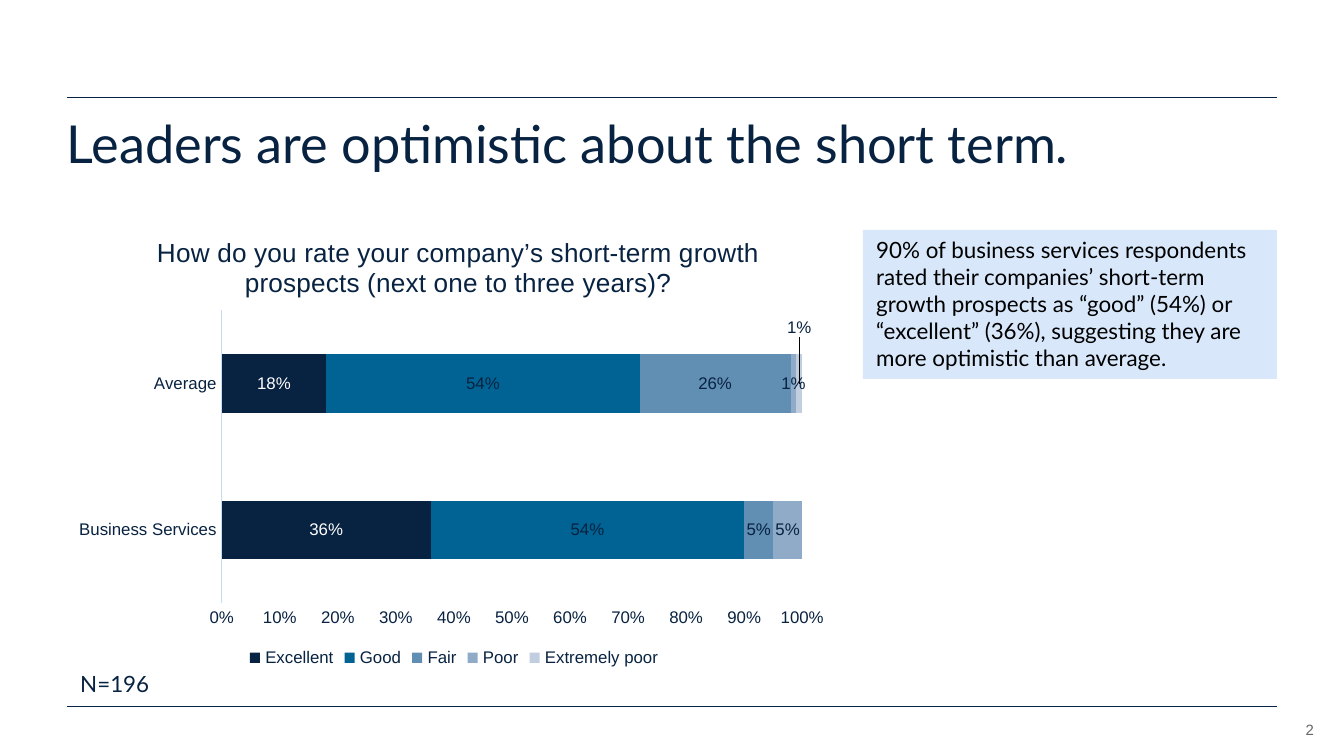
from lxml import etree
from pptx import Presentation
from pptx.chart.data import CategoryChartData
from pptx.dml.color import RGBColor
from pptx.enum.chart import XL_CHART_TYPE, XL_LABEL_POSITION, XL_LEGEND_POSITION, XL_TICK_MARK
from pptx.enum.shapes import MSO_CONNECTOR, MSO_SHAPE
from pptx.enum.text import MSO_ANCHOR, MSO_AUTO_SIZE, PP_ALIGN
from pptx.oxml.ns import qn
from pptx.util import Pt

LEFT, RIGHT = PP_ALIGN.LEFT, PP_ALIGN.RIGHT
TOP, BOTTOM = MSO_ANCHOR.TOP, MSO_ANCHOR.BOTTOM
NO_TICK = XL_TICK_MARK.NONE
CENTER_LABEL = XL_LABEL_POSITION.CENTER

NAVY = "082241"
TITLE = "Leaders are optimistic about the short term."
CALLOUT = ("90% of business services respondents rated their companies’ short-term "
           "growth prospects as “good” (54%) or “excellent” (36%), suggesting they "
           "are more optimistic than average.")
SAMPLE = "N=196"
PAGE = "2"
QUESTION = "How do you rate your company’s short-term growth prospects (next one to three years)?"
CATEGORIES = ["Business Services", "Average"]
SERIES = [
    ("Excellent", (0.36, 0.18), NAVY, "FFFFFF"),
    ("Good", (0.54, 0.54), "006393", NAVY),
    ("Fair", (0.05, 0.26), "618EB3", NAVY),
    ("Poor", (0.05, 0.01), "8FABC8", NAVY),
    ("Extremely poor", (None, 0.01), "C1CEDF", NAVY),
]

WIDTH, HEIGHT = 1344, 756
MARGIN, EDGE = 67, 1277
RULES = (97, 707)
TITLE_BOX = (MARGIN, 118, EDGE - MARGIN, 74)
CALLOUT_BOX = (863, 230, EDGE - 863, 149)
SAMPLE_BOX = (MARGIN, 664, 181, 40)
PAGE_BOX = (1251, 715, 63, 24)
CHART_BOX = (MARGIN, 208, 774, 465)
PLOT_BOX = (225, 309, 579, 291)
QUESTION_POINT = (152, 232)
LABEL_LIFT = -58


def px(value):
    return round(value * 9144000 / WIDTH)


def box(values):
    return [px(value) for value in values]


def color(value):
    return RGBColor.from_string(value)


def set_font(font, size, name="Arial", fill=NAVY):
    for key, value in {"size": Pt(size), "name": name, "bold": False}.items():
        setattr(font, key, value)
    font.color.rgb = color(fill)


def write(shape, text, size, name="Lato", fill=NAVY, align=LEFT, anchor=TOP, inset=None):
    frame = shape.text_frame
    settings = {"word_wrap": True, "auto_size": MSO_AUTO_SIZE.NONE, "vertical_anchor": anchor}
    if inset is not None:
        settings.update({f"margin_{side}": inset for side in ("left", "top", "right", "bottom")})
    for key, value in settings.items():
        setattr(frame, key, value)
    frame.text = text
    paragraph = frame.paragraphs[0]
    paragraph.alignment = align
    set_font(paragraph.runs[0].font, size, name, fill)
    return paragraph


def fill_layout(layout, values):
    for child in list(layout):
        layout.remove(child)
    manual = etree.SubElement(layout, qn("c:manualLayout"))
    for key, value in values.items():
        etree.SubElement(manual, qn(f"c:{key}")).set("val", str(value))


def chart_share(x, y):
    left, top, width, height = CHART_BOX
    return round((x - left) / width, 2), round((y - top) / height, 2)


def add_rule(slide, y):
    rule = slide.shapes.add_connector(MSO_CONNECTOR.STRAIGHT, *box((MARGIN, y, EDGE, y)))
    rule.line.color.rgb = color(NAVY)
    rule.line.width = Pt(0.5)
    etree.SubElement(rule._element.spPr, qn("a:effectLst"))


def format_axes(chart):
    for axis in (chart.category_axis, chart.value_axis):
        for key, value in {"major_tick_mark": NO_TICK, "minor_tick_mark": NO_TICK,
                           "has_major_gridlines": False}.items():
            setattr(axis, key, value)
        set_font(axis.tick_labels.font, 9)
    chart.category_axis.format.line.color.rgb = color("C5DCF8")
    chart.category_axis.format.line.width = Pt(0.75)
    value_axis = chart.value_axis
    value_axis.format.line.fill.background()
    for key, value in {"minimum_scale": 0, "maximum_scale": 1, "major_unit": 0.1}.items():
        setattr(value_axis, key, value)
    value_axis.tick_labels.number_format = "0%"
    value_axis.tick_labels.number_format_is_linked = False


def format_series(plot):
    for series, (_, _, fill, label_color) in zip(plot.series, SERIES):
        series.format.fill.solid()
        series.format.fill.fore_color.rgb = color(fill)
        labels = series.data_labels
        for key, value in {"show_value": True, "position": CENTER_LABEL,
                           "number_format": "0%", "number_format_is_linked": False}.items():
            setattr(labels, key, value)
        set_font(labels.font, 9, fill=label_color)
    lifted = plot.series[-1].points[1].data_label
    set_font(lifted.font, 9)
    lifted.position = CENTER_LABEL
    index = plot.series[-1]._element.find(".//" + qn("c:dLbl")).find(qn("c:idx"))
    layout = etree.Element(qn("c:layout"))
    index.addnext(layout)
    fill_layout(layout, {"x": 0, "y": round(LABEL_LIFT / CHART_BOX[3], 2)})


def place_chart_parts(chart):
    element = chart._chartSpace.chart
    title = element.find(qn("c:title"))
    layout = title.find(qn("c:layout"))
    if layout is None:
        layout = etree.Element(qn("c:layout"))
        title.find(qn("c:tx")).addnext(layout)
    x, y = chart_share(*QUESTION_POINT)
    fill_layout(layout, {"xMode": "edge", "yMode": "edge", "x": x, "y": y})
    plot_area = element.plotArea
    layout = plot_area.find(qn("c:layout"))
    if layout is None:
        layout = etree.Element(qn("c:layout"))
        plot_area.insert(0, layout)
    x, y = chart_share(*PLOT_BOX[:2])
    fill_layout(layout, {"layoutTarget": "inner", "xMode": "edge", "yMode": "edge",
                         "x": x, "y": y,
                         "w": round(PLOT_BOX[2] / CHART_BOX[2], 2),
                         "h": round(PLOT_BOX[3] / CHART_BOX[3], 2)})


def add_rating_chart(slide):
    data = CategoryChartData(number_format="0%")
    data.categories = CATEGORIES
    for name, values, _, _ in SERIES:
        data.add_series(name, values)
    chart = slide.shapes.add_chart(XL_CHART_TYPE.BAR_STACKED_100, *box(CHART_BOX), data).chart
    set_font(chart.font, 10)
    chart.has_title = True
    chart.chart_title.text_frame.text = QUESTION
    set_font(chart.chart_title.text_frame.paragraphs[0].runs[0].font, 14)
    chart.has_legend = True
    chart.legend.position = XL_LEGEND_POSITION.BOTTOM
    chart.legend.include_in_layout = False
    set_font(chart.legend.font, 9)
    plot = chart.plots[0]
    for key, value in {"gap_width": 150, "overlap": 100, "vary_by_categories": False}.items():
        setattr(plot, key, value)
    format_axes(chart)
    format_series(plot)
    place_chart_parts(chart)


def main():
    presentation = Presentation()
    presentation.slide_width, presentation.slide_height = px(WIDTH), px(HEIGHT)
    slide = presentation.slides.add_slide(presentation.slide_layouts[5])
    for y in RULES:
        add_rule(slide, y)
    title = slide.shapes.title
    title.left, title.top, title.width, title.height = box(TITLE_BOX)
    write(title, TITLE, 28, inset=0).line_spacing = 0.9
    callout = slide.shapes.add_shape(MSO_SHAPE.RECTANGLE, *box(CALLOUT_BOX))
    callout.shadow.inherit = False
    callout.fill.solid()
    callout.fill.fore_color.rgb = color("D8E8FA")
    callout.line.fill.background()
    write(callout, CALLOUT, 12, fill="000000")
    write(slide.shapes.add_textbox(*box(SAMPLE_BOX)), SAMPLE, 12)
    write(slide.shapes.add_textbox(*box(PAGE_BOX)), PAGE, 8, "Arial", "666666", RIGHT, BOTTOM, 0)
    add_rating_chart(slide)
    presentation.save("out.pptx")


if __name__ == "__main__":
    main()
